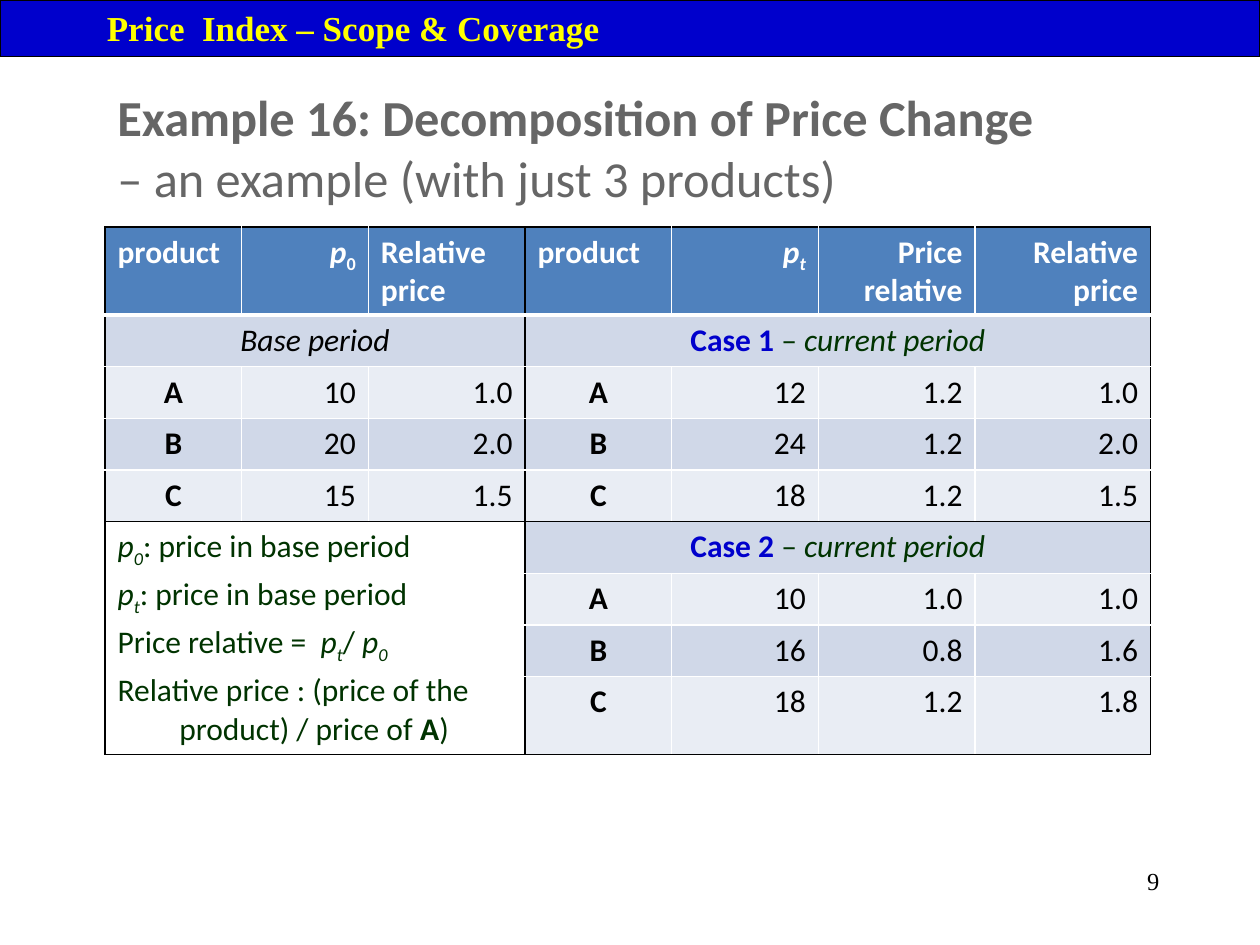
from lxml import etree
from pptx import Presentation
from pptx.dml.color import RGBColor
from pptx.enum.shapes import MSO_SHAPE
from pptx.enum.text import MSO_ANCHOR, PP_ALIGN
from pptx.oxml.ns import qn
from pptx.util import Inches, Pt

RECTANGLE = MSO_SHAPE.RECTANGLE
TOP, MIDDLE = MSO_ANCHOR.TOP, MSO_ANCHOR.MIDDLE
LEFT, CENTER, RIGHT = PP_ALIGN.LEFT, PP_ALIGN.CENTER, PP_ALIGN.RIGHT

BLACK = RGBColor(0x00, 0x00, 0x00)
WHITE = RGBColor(0xFF, 0xFF, 0xFF)
GREY = RGBColor(0x66, 0x66, 0x66)
BLUE = RGBColor(0x00, 0x00, 0xCC)
YELLOW = RGBColor(0xFF, 0xFF, 0x00)
GREEN = RGBColor(0x00, 0x33, 0x00)
HEADER = RGBColor(0x4F, 0x81, 0xBD)
BANDS = (RGBColor(0xE9, 0xED, 0xF4), RGBColor(0xD0, 0xD8, 0xE8))

SANS, SERIF = "Calibri", "Times New Roman"
WIDTH, HEIGHT = Inches(10), Inches(7.5)
COLUMNS = (1.09, 1.01, 1.25, 1.17, 1.17, 1.25, 1.4)
ROW_HEIGHT, ROW_COUNT = 0.41, 9
BASE_COLUMN, CASE_COLUMN = 0, 3
CASE_1_ROW, CASE_2_ROW = 1, 5

HEADINGS = (
    ([("product", "b")], LEFT),
    ([("p", "bi"), ("0", "bs")], RIGHT),
    ([("Relative price", "b")], LEFT),
    ([("product", "b")], LEFT),
    ([("p", "bi"), ("t", "bis")], RIGHT),
    ([("Price relative", "b")], RIGHT),
    ([("Relative price", "b")], RIGHT),
)
BASE_PRICES = (("A", "10", "1.0"), ("B", "20", "2.0"), ("C", "15", "1.5"))
CASE_1_PRICES = (("A", "12", "1.2", "1.0"), ("B", "24", "1.2", "2.0"), ("C", "18", "1.2", "1.5"))
CASE_2_PRICES = (("A", "10", "1.0", "1.0"), ("B", "16", "0.8", "1.6"), ("C", "18", "1.2", "1.8"))
NOTES = (
    [("p", "i"), ("0", "is"), (": price in base period", "")],
    [("p", "i"), ("t", "is"), (": price in base period", "")],
    [("Price relative =  ", ""), ("p", "i"), ("t", "is"), ("/ ", ""), ("p", "i"), ("0", "is")],
    [("Relative price : (price of the product) / price of ", ""), ("A", "b"), (")", "")],
)


def share(x, y, width, height):
    """Turn shares of the slide into a box of lengths."""
    return int(x * WIDTH), int(y * HEIGHT), int(width * WIDTH), int(height * HEIGHT)


def write(para, spans, size, color, face=SANS, align=LEFT):
    """Fill a paragraph with (text, style[, colour]) spans; b bold, i italic, s subscript."""
    para.alignment = align
    para.font.name, para.font.size, para.font.color.rgb = face, Pt(size), color
    for index, (text, style, *tint) in enumerate(spans):
        if text == "\n":
            para.add_line_break()
            continue
        span = para.add_run()
        span.text = text
        span.font.bold, span.font.italic = "b" in style, "i" in style
        if "s" in style:
            span.font._element.set("baseline", "-25000")
        if tint:
            span.font.color.rgb = tint[0]


def add_text(page, box, spans, size, color, face=SANS, align=LEFT, anchor=TOP):
    """Add a wrapped text box with one paragraph."""
    frame = page.shapes.add_textbox(*box).text_frame
    frame.word_wrap, frame.vertical_anchor = True, anchor
    write(frame.paragraphs[0], spans, size, color, face, align)


def add_banner(page, box):
    """Add the blue strip with the topic of the deck."""
    banner = page.shapes.add_shape(RECTANGLE, *box)
    banner.shadow.inherit = False
    banner.fill.solid()
    banner.fill.fore_color.rgb = BLUE
    banner.line.color.rgb, banner.line.width = BLACK, Pt(0.75)
    banner.text_frame.vertical_anchor = TOP
    para = banner.text_frame.paragraphs[0]
    write(para, [("Price  Index – Scope & Coverage", "b")], 20, YELLOW, SERIF)
    para._p.get_or_add_pPr().set("indent", str(Inches(0.75)))


def add_border(cell, side, color, width):
    """Draw one side (L, R, T or B) of a cell."""
    properties = cell._tc.get_or_add_tcPr()
    line = etree.SubElement(properties, qn(f"a:ln{side}"), w=str(Pt(width)))
    fill = etree.SubElement(line, qn("a:solidFill"))
    etree.SubElement(fill, qn("a:srgbClr"), val=str(color))


def style_cell(cell, row, column):
    """Frame the blocks in black, rule the inside in white and band the rows."""
    last_row = row + (cell.span_height if cell.is_merge_origin else 1) - 1
    last_column = column + (cell.span_width if cell.is_merge_origin else 1) - 1
    framed = {
        "L": column in (BASE_COLUMN, CASE_COLUMN),
        "R": last_column in (CASE_COLUMN - 1, len(COLUMNS) - 1),
        "T": row in (0, CASE_2_ROW),
        "B": last_row in (CASE_2_ROW - 1, ROW_COUNT - 1),
    }
    for side, black in framed.items():
        thick = (row == 0 and side == "B") or (row == 1 and side == "T")
        add_border(cell, side, BLACK if black else WHITE, 3 if thick else 1)
    is_note = row >= CASE_2_ROW and column < CASE_COLUMN
    cell.fill.solid()
    cell.fill.fore_color.rgb = HEADER if row == 0 else WHITE if is_note else BANDS[row % 2]


def write_cell(cell, spans, align, color=BLACK):
    """Write a one-paragraph cell."""
    write(cell.text_frame.paragraphs[0], spans, 18, color, align=align)


def write_block(table, row, column, caption, prices):
    """Write a period's caption across its columns and its price rows below."""
    first = table.cell(row, column)
    first.merge(table.cell(row, column + len(prices[0]) - 1))
    write_cell(first, caption, CENTER)
    for down, (product, *values) in enumerate(prices, row + 1):
        write_cell(table.cell(down, column), [(product, "b")], CENTER)
        for across, value in enumerate(values, column + 1):
            write_cell(table.cell(down, across), [(value, "")], RIGHT)


def write_notes(cell):
    """Write the definitions of the price terms."""
    frame = cell.text_frame
    for index, spans in enumerate(NOTES):
        para = frame.add_paragraph() if index else frame.paragraphs[0]
        write(para, spans, 18, GREEN)
        para.space_before = Pt(3)
    properties = para._p.get_or_add_pPr()
    properties.set("marL", str(Inches(0.49)))
    properties.set("indent", str(-Inches(0.49)))


def case_caption(number):
    """Return the caption spans of a current-period case."""
    return [(f"Case {number} ", "b", BLUE), ("– ", "", GREEN), ("current period", "i", GREEN)]


def add_price_table(page, box):
    """Add the table that compares the base period with two cases."""
    table = page.shapes.add_table(ROW_COUNT, len(COLUMNS), *box).table
    table.first_row = table.horz_banding = False
    for column, width in zip(table.columns, COLUMNS):
        column.width = int(box[2] * width / sum(COLUMNS))
    for row in table.rows:
        row.height = Inches(ROW_HEIGHT)
    for column, (spans, align) in enumerate(HEADINGS):
        write_cell(table.cell(0, column), spans, align, WHITE)
    write_block(table, CASE_1_ROW, BASE_COLUMN, [("Base period", "i")], BASE_PRICES)
    write_block(table, CASE_1_ROW, CASE_COLUMN, case_caption(1), CASE_1_PRICES)
    write_block(table, CASE_2_ROW, CASE_COLUMN, case_caption(2), CASE_2_PRICES)
    notes = table.cell(CASE_2_ROW, BASE_COLUMN)
    notes.merge(table.cell(ROW_COUNT - 1, CASE_COLUMN - 1))
    write_notes(notes)
    for row in range(ROW_COUNT):
        for column in range(len(COLUMNS)):
            style_cell(table.cell(row, column), row, column)


def main():
    """Build the slide and save the deck."""
    deck = Presentation()
    deck.slide_width, deck.slide_height = WIDTH, HEIGHT
    page = deck.slides.add_slide(deck.slide_layouts[6])
    title = [
        ("Example 16: Decomposition of Price Change", "b"),
        ("\n", ""),
        ("– an example (with just 3 products)", ""),
    ]
    add_text(page, share(1 / 12, 0.1, 0.84, 1 / 9), title, 28.8, GREY, anchor=MIDDLE)
    add_text(page, share(0.72, 0.91, 0.21, 1 / 15), [("9", "")], 14, BLACK, SERIF, RIGHT)
    add_banner(page, share(0, 0, 1, 0.06))
    table_height = ROW_COUNT * Inches(ROW_HEIGHT) / HEIGHT
    add_price_table(page, share(1 / 12, 0.24, 0.83, table_height))
    deck.save("out.pptx")


if __name__ == "__main__":
    main()
